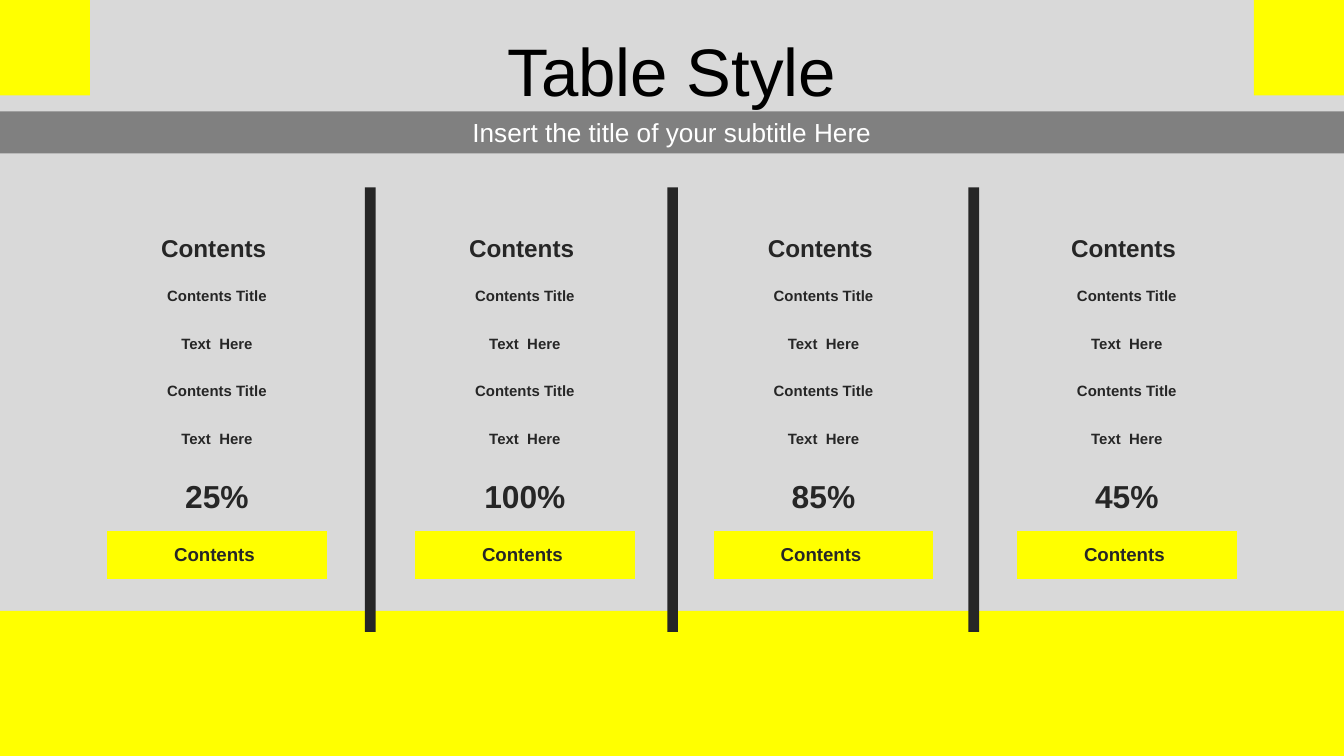
"""Build a slide of four content columns under a title band."""
from dataclasses import dataclass
from typing import Any

from lxml import etree
from pptx import Presentation, util as u
from pptx.dml import color
from pptx.enum import shapes as s, text as t
from pptx.oxml import ns


@dataclass(frozen=True)
class Theme:
    """Colours, font and type sizes."""
    back: str = "D9D9D9"
    gold: str = "FFFF00"
    grey: str = "808080"
    dark: str = "262626"
    black: str = "000000"
    white: str = "FFFFFF"
    face: str = "Arial"
    title: int = 36
    sub: int = 14
    head: int = 13
    body: int = 8
    rate: int = 17
    foot: int = 10
    bare: int = 2


@dataclass(frozen=True)
class Box:
    """A place in percent of the slide's width and height."""
    left: float
    top: float
    wide: float
    high: float
    fill: str | None = None


@dataclass(frozen=True)
class Line:
    """A piece of text with its size and look."""
    words: str
    size: int
    tint: str
    bold: bool = False


@dataclass(frozen=True)
class Panel:
    """A content column: its left side and its rate."""
    left: float
    rate: str


LOOK = Theme()
WIDE = u.Inches(10)
HIGH = WIDE * 9 // 16
PLAIN = "{2D5ABB26-0587-4C30-8999-92F81FD0307C}"
ROWS = [6.3] * 7 + [2.67, 6.3, 3.38]
COLS = [2.85, 16.36, 2.85]
RATE, FOOT = 6, 8
INSET = {"margin_left": u.Inches(0.06), "margin_right": u.Inches(0.06),
         "margin_top": u.Inches(0.03), "margin_bottom": u.Inches(0.03)}
FRAME = {"word_wrap": True, "vertical_anchor": t.MSO_ANCHOR.MIDDLE,
         "margin_top": 0, "margin_bottom": 0}
DECOR = [Box(93.3, 0, 6.7, 12.63, LOOK.gold), Box(0, 0, 6.7, 12.63, LOOK.gold),
         Box(0, 80.8, 100, 19.2, LOOK.gold)]
HEADS = [(Box(0, 3.56, 100, 11.2), Line("Table Style", LOOK.title, LOOK.black)),
         (Box(0, 14.75, 100, 5.55, LOOK.grey),
          Line("Insert the title of your subtitle Here", LOOK.sub, LOOK.white))]
PANELS = [Panel(5.12, "25%"), Panel(28.03, "100%"), Panel(50.25, "85%"), Panel(72.82, "45%")]
BARS = [Box(left, 24.8, 0.8, 58.8, LOOK.dark) for left in (27.15, 49.65, 72.05)]


def across(share: float) -> int:
    """Turn a percent of the width into a length."""
    return round(WIDE * share / 100)


def down(share: float) -> int:
    """Turn a percent of the height into a length."""
    return round(HIGH * share / 100)


def place(box: Box) -> tuple[int, int, int, int]:
    """Give a box as lengths."""
    return across(box.left), down(box.top), across(box.wide), down(box.high)


def apply(item: Any, form: dict[str, Any]) -> None:
    """Set attributes from a dict of format values."""
    for name, value in form.items():
        setattr(item, name, value)


def paint(fill: Any, tint: str | None) -> None:
    """Fill with a colour, or with none."""
    if tint is None:
        fill.background()
    else:
        fill.solid()
        fill.fore_color.rgb = color.RGBColor.from_string(tint)


def write(frame: Any, line: Line) -> Any:
    """Write one centred line and return its paragraph."""
    para = frame.paragraphs[0]
    para.alignment = t.PP_ALIGN.CENTER
    run = para.add_run()
    run.text = line.words
    apply(run.font, {"name": LOOK.face, "size": u.Pt(line.size), "bold": line.bold})
    run.font.color.rgb = color.RGBColor.from_string(line.tint)
    return para


def block(slide: Any, box: Box) -> Any:
    """Draw a plain rectangle."""
    shape = slide.shapes.add_shape(s.MSO_SHAPE.RECTANGLE, *place(box))
    shape.shadow.inherit = False
    paint(shape.fill, box.fill)
    shape.line.fill.background()
    return shape


def banner(slide: Any, box: Box, line: Line) -> None:
    """Draw a full-width heading."""
    shape = block(slide, box) if box.fill else slide.shapes.add_textbox(*place(box))
    apply(shape.text_frame, FRAME)
    write(shape.text_frame, line).space_before = u.Pt(line.size * 0.2)


def lines(panel: Panel) -> dict[int, Line]:
    """List a panel's lines by row."""
    body = ["Contents Title", "Text  Here"] * 2
    found = {1: Line("Contents ", LOOK.head, LOOK.dark, True),
             RATE: Line(panel.rate, LOOK.rate, LOOK.dark, True),
             FOOT: Line("Contents ", LOOK.foot, LOOK.dark, True)}
    found.update({row: Line(words, LOOK.body, LOOK.dark, True)
                  for row, words in enumerate(body, 2)})
    return found


def column(slide: Any, panel: Panel) -> None:
    """Draw a content column as a table."""
    box = Box(panel.left, 23.47, sum(COLS), sum(ROWS))
    table = slide.shapes.add_table(len(ROWS), len(COLS), *place(box)).table
    table._tbl.tblPr.find(ns.qn("a:tableStyleId")).text = PLAIN
    apply(table, {"first_row": False, "horz_banding": False})
    for col, share in zip(table.columns, COLS):
        col.width = across(share)
    for row, share in zip(table.rows, ROWS):
        row.height = down(share)
    found = lines(panel)
    for row in range(len(ROWS)):
        for col in range(len(COLS)):
            cell = table.cell(row, col)
            apply(cell, INSET | {"vertical_anchor": t.MSO_ANCHOR.MIDDLE})
            paint(cell.fill, LOOK.gold if (row, col) == (FOOT, 1) else None)
            if col == 1 and row in found:
                write(cell.text_frame, found[row])
            else:
                para = cell.text_frame.paragraphs[0]
                etree.SubElement(para._p, ns.qn("a:endParaRPr"), sz=str(LOOK.bare * 100))
    table.cell(0, 0).merge(table.cell(0, 2))
    table.cell(RATE, 1).merge(table.cell(RATE + 1, 1))


def main() -> None:
    """Build and save the slide."""
    deck = Presentation()
    apply(deck, {"slide_width": WIDE, "slide_height": HIGH})
    slide = deck.slides.add_slide(deck.slide_layouts[6])
    paint(slide.background.fill, LOOK.back)
    for box in DECOR:
        block(slide, box)
    for box, line in HEADS:
        banner(slide, box, line)
    for panel in PANELS:
        column(slide, panel)
    for bar in BARS:
        block(slide, bar)
    deck.save("out.pptx")


if __name__ == "__main__":
    main()
